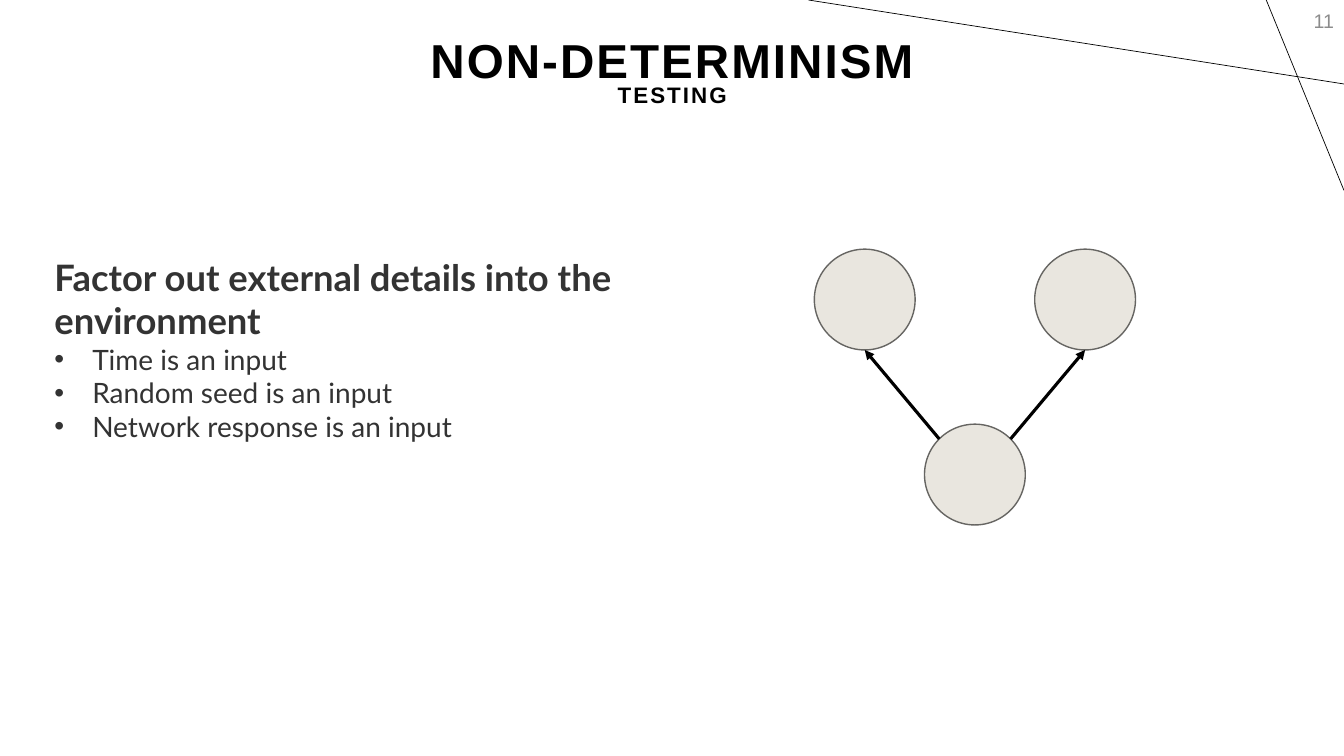
from lxml.etree import SubElement
from pptx import Presentation
from pptx.dml.color import RGBColor
from pptx.enum.shapes import MSO_CONNECTOR, MSO_SHAPE
from pptx.enum.text import MSO_ANCHOR as Anchor, MSO_AUTO_SIZE as AutoSize, PP_ALIGN as Align
from pptx.oxml.ns import qn
from pptx.util import Pt

BLACK = "000000"
NODE_SIZE = 72
INPUTS = ["Time is an input", "Random seed is an input", "Network response is an input"]


def color(hex_value):
    """Return the colour for a hex string."""
    return RGBColor.from_string(hex_value)


def place(shape, left, top, width, height):
    """Set the position and size of a shape in points."""
    shape.left, shape.top = Pt(left), Pt(top)
    shape.width, shape.height = Pt(width), Pt(height)


def style(paragraph, face, size, hex_value, bold=False):
    """Set the font of a whole paragraph."""
    font = paragraph.font
    font.name, font.size, font.bold = face, Pt(size), bold
    font.color.rgb = color(hex_value)


def write_label(shape, text, size, hex_value, align, bold=False):
    """Write one vertically centred Arial line into a shape."""
    frame = shape.text_frame
    frame.word_wrap = True
    frame.auto_size = AutoSize.NONE
    frame.vertical_anchor = Anchor.MIDDLE
    label = frame.paragraphs[0]
    label.text = text
    label.alignment = align
    style(label, "Arial", size, hex_value, bold)
    return label


def write_heading(shape, text, size):
    """Write a bold, letter-spaced, centred heading."""
    heading = write_label(shape, text, size, BLACK, Align.CENTER, True)
    heading.line_spacing = 0.9
    heading._p.pPr.find(qn("a:defRPr")).set("spc", "150")


def set_bullet(paragraph, indent, bullet=None):
    """Set the hanging indent and the bullet of a paragraph."""
    properties = paragraph._p.get_or_add_pPr()
    properties.set("marL", str(Pt(indent)))
    properties.set("indent", str(-Pt(indent)))
    mark = properties.makeelement(qn("a:buChar" if bullet else "a:buNone"))
    if bullet:
        mark.set("char", bullet)
    properties.insert_element_before(mark, "a:tabLst", "a:defRPr", "a:extLst")


def write_advice(body, heading, items):
    """Write a bold heading followed by a bulleted list."""
    frame = body.text_frame
    frame.word_wrap = True
    frame.auto_size = AutoSize.SHAPE_TO_FIT_TEXT
    frame.vertical_anchor = Anchor.TOP
    frame.text = "\n".join([heading, *items])
    for index, paragraph in enumerate(frame.paragraphs):
        is_heading = index == 0
        paragraph.space_before = Pt(0)
        style(paragraph, "Lato", 26 if is_heading else 20, "333333", is_heading)
        if is_heading:
            set_bullet(paragraph, 0)
        else:
            set_bullet(paragraph, 27, "•")


def add_line(slide, start, end, width, arrow=False):
    """Draw a straight black line, with an arrowhead at its end if asked."""
    line = slide.shapes.add_connector(
        MSO_CONNECTOR.STRAIGHT, *(Pt(value) for value in (*start, *end)))
    line.line.color.rgb = color(BLACK)
    line.line.width = Pt(width)
    if arrow:
        SubElement(line.line._get_or_add_ln(), qn("a:tailEnd"), type="triangle")
    SubElement(line._element.spPr, qn("a:effectLst"))


def add_node(slide, center_x, center_y):
    """Draw a graph node around its centre."""
    radius = NODE_SIZE / 2
    node = slide.shapes.add_shape(
        MSO_SHAPE.OVAL, Pt(center_x - radius), Pt(center_y - radius), Pt(NODE_SIZE), Pt(NODE_SIZE))
    node.shadow.inherit = False
    node.fill.solid()
    node.fill.fore_color.rgb = color("E9E6DF")
    node.line.color.rgb = color("666562")
    node.line.width = Pt(1)


def add_fork(slide, root_x, root_y, spread, rise):
    """Draw a root node with arrows to two nodes above it."""
    radius = NODE_SIZE / 2
    diagonal = radius * 0.5 ** 0.5
    add_node(slide, root_x, root_y)
    for side in (-1, 1):
        branch_x, branch_y = root_x + side * spread, root_y - rise
        add_node(slide, branch_x, branch_y)
        add_line(slide, (root_x + side * diagonal, root_y - diagonal),
                 (branch_x, branch_y + radius), 2.25, arrow=True)


def main():
    """Build the slide and save it."""
    deck = Presentation()
    deck.slide_width, deck.slide_height = Pt(960), Pt(540)
    slide = deck.slides.add_slide(deck.slide_layouts[1])
    title, body = slide.placeholders

    add_line(slide, (960, 60), (577.5, 0), 0.5)
    add_line(slide, (904.5, 0), (960, 136), 0.5)

    place(title, 1, -7, 958.5, 104.5)
    write_heading(title, "NON-DETERMINISM", 34)
    subtitle = slide.shapes.add_textbox(Pt(1), Pt(16.5), Pt(958.5), Pt(104.5))
    write_heading(subtitle, "TESTING", 16)
    page_number = slide.shapes.add_textbox(Pt(744), Pt(0), Pt(216), Pt(29))
    write_label(page_number, "11", 14, "8C8C8C", Align.RIGHT)

    place(body, 31.7, 178.5, 461.5, 143.3)
    write_advice(body, "Factor out external details into the environment", INPUTS)
    add_fork(slide, 696.4, 339, 78.7, 125)

    deck.save("out.pptx")


if __name__ == "__main__":
    main()
